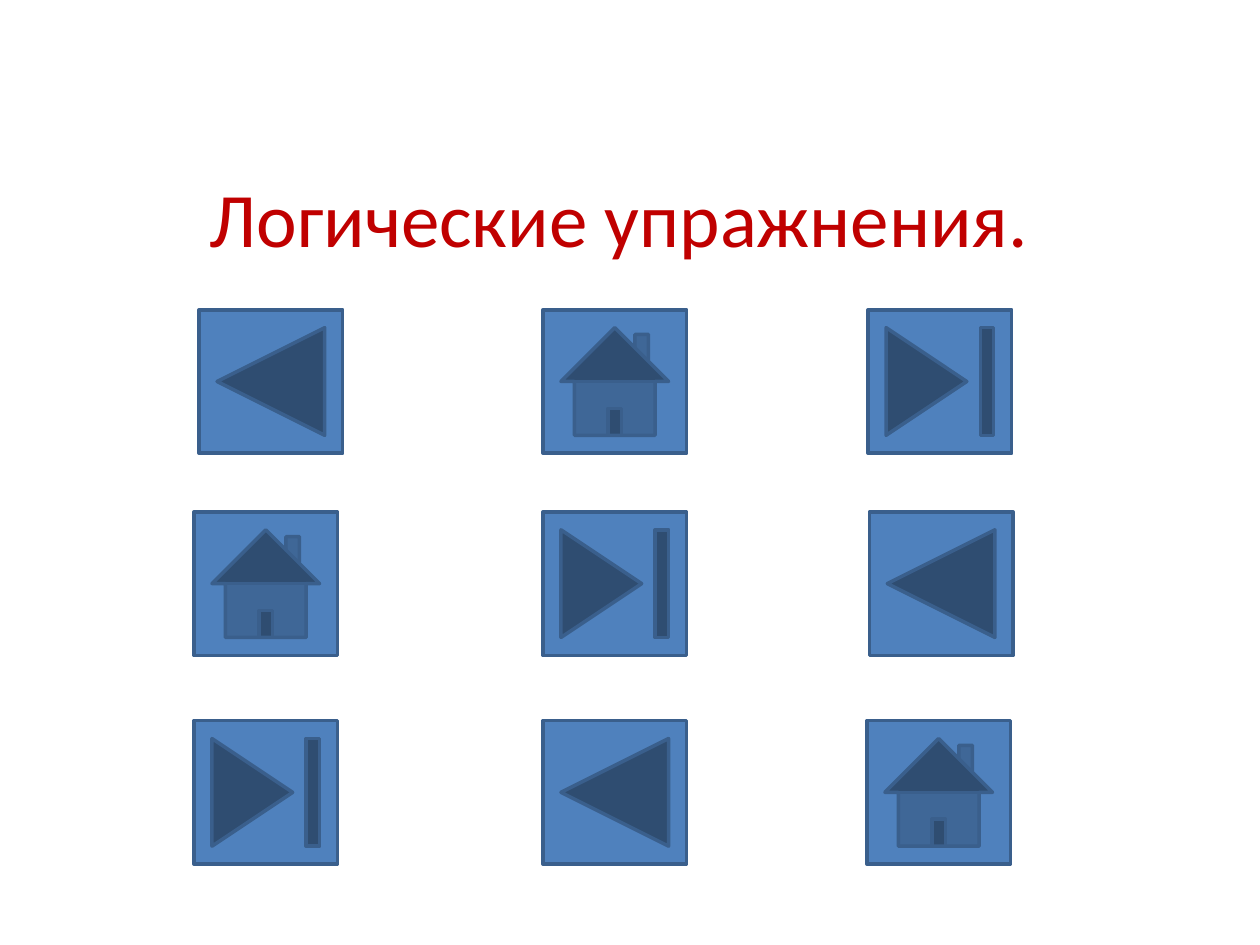
from pptx import Presentation
from pptx.dml.color import RGBColor
from pptx.enum.shapes import MSO_SHAPE
from pptx.enum.text import MSO_ANCHOR, PP_ALIGN
from pptx.util import Pt

# Content: each row has its top and (left, button) pairs, in points
TITLE = "Логические упражнения."
BACK = MSO_SHAPE.ACTION_BUTTON_BACK_OR_PREVIOUS
HOME = MSO_SHAPE.ACTION_BUTTON_HOME
END = MSO_SHAPE.ACTION_BUTTON_END
ROWS = [
    (177, [(113.8, BACK), (310.3, HOME), (496.1, END)]),
    (292.5, [(110.9, HOME), (310.3, END), (496.8, BACK)]),
    (411.8, [(110.9, END), (310.3, BACK), (495.4, HOME)]),
]
BUTTON_SIZE = 82

RED = RGBColor(0xC0, 0x00, 0x00)
BLUE = RGBColor(0x4F, 0x81, 0xBD)
DARK_BLUE = RGBColor(0x3A, 0x5F, 0x8C)

prs = Presentation()
prs.slide_width, prs.slide_height = Pt(720), Pt(540)
s = prs.slides.add_slide(prs.slide_layouts[5])

# Title
title = s.shapes.title
title.left, title.top, title.width, title.height = Pt(48), Pt(66), Pt(612), Pt(116)
tf = title.text_frame
tf.text = TITLE
tf.vertical_anchor = MSO_ANCHOR.MIDDLE
p = tf.paragraphs[0]
p.alignment = PP_ALIGN.CENTER
p.font.name = "Calibri"
p.font.size = Pt(44)
p.font.color.rgb = RED

# Grid of buttons
for top, buttons in ROWS:
    for left, kind in buttons:
        sp = s.shapes.add_shape(kind, Pt(left), Pt(top), Pt(BUTTON_SIZE), Pt(BUTTON_SIZE))
        sp.shadow.inherit = False
        sp.fill.solid()
        sp.fill.fore_color.rgb = BLUE
        sp.line.color.rgb = DARK_BLUE
        sp.line.width = Pt(2)

prs.save("out.pptx")
